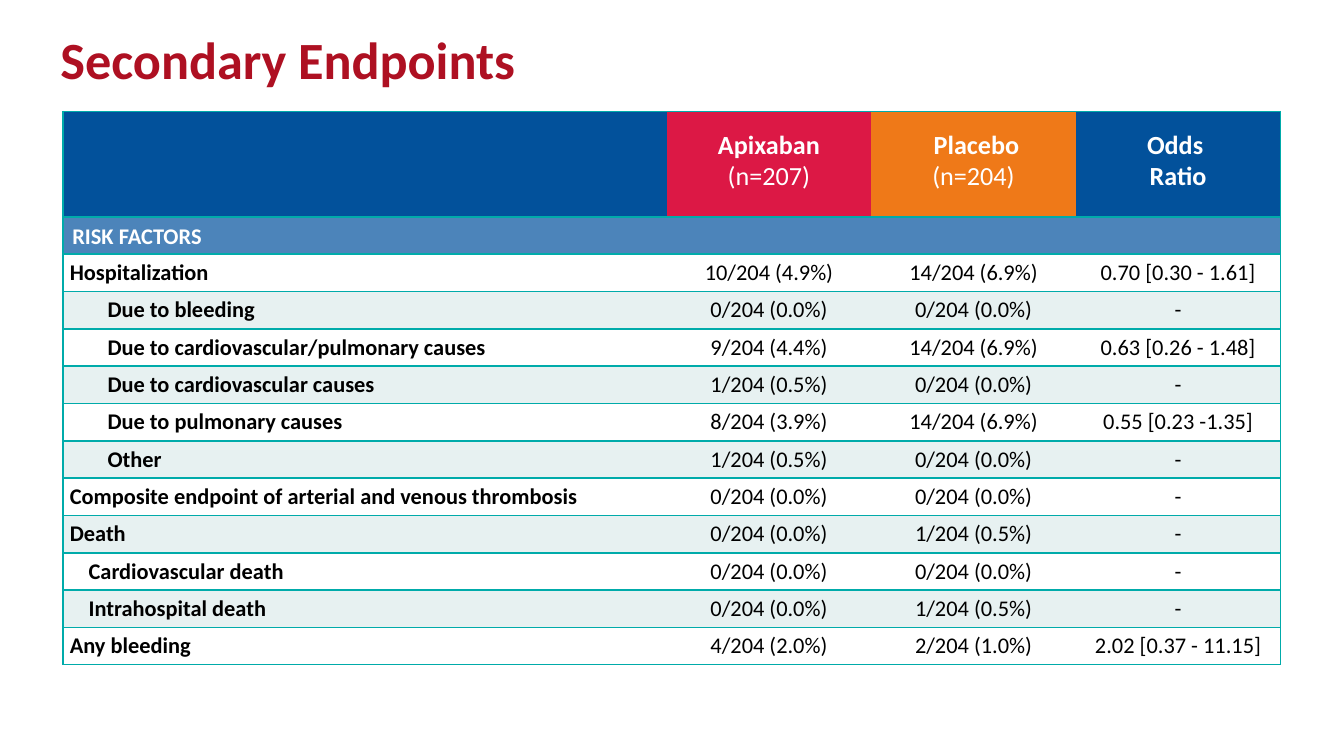
from lxml import etree
from pptx import Presentation
from pptx.dml.color import RGBColor
from pptx.enum.text import MSO_ANCHOR, PP_ALIGN
from pptx.oxml.ns import qn
from pptx.util import Pt

TOP, MIDDLE = MSO_ANCHOR.TOP, MSO_ANCHOR.MIDDLE
LEFT, CENTER = PP_ALIGN.LEFT, PP_ALIGN.CENTER
TITLE_ONLY = 5
FONT = "Calibri"
COLORS = {
    "title": "AE1022", "border": "00ABAA", "navy": "02519B", "red": "DC1845",
    "orange": "EF7918", "section": "4C84BA", "white": "FFFFFF",
    "tint": "E7F1F1", "text": "000000",
}

TABLE_LEFT = 33.8
COL_WIDTHS = [323.4, 109.6, 109.6, 109.6]
HEADER_H, ROW_H = 56.4, 20
# Cell margins: left, top, right, bottom
HEADER_INSETS = (5, 1.5, 5, 5)
SECTION_INSETS = (5, 3, 5, 2)
BODY_INSETS = (3.6, 0, 3.6, 0)
CAUSE, KIND = 20.2, 10.1  # indents of the sub-rows

# Header cells: fill, paragraphs of (text, bold)
HEADER = [
    ("navy", []),
    ("red", [("Apixaban", True), ("(n=207)", False)]),
    ("orange", [(" Placebo", True), ("(n=204)", False)]),
    ("navy", [("Odds \nRatio", True)]),
]

# Body rows: indent, label, apixaban, placebo, odds ratio
HOSPITALIZATION = [
    (0, "Hospitalization", "10/204 (4.9%)", "14/204 (6.9%)", "0.70 [0.30 - 1.61]"),
    (CAUSE, "Due to bleeding", "0/204 (0.0%)", "0/204 (0.0%)", "-"),
]
OUTCOMES = [
    (CAUSE, "Due to cardiovascular/pulmonary causes",
     "9/204 (4.4%)", "14/204 (6.9%)", "0.63 [0.26 - 1.48]"),
    (CAUSE, "Due to cardiovascular causes", "1/204 (0.5%)", "0/204 (0.0%)", "-"),
    (CAUSE, "Due to pulmonary causes", "8/204 (3.9%)", "14/204 (6.9%)", "0.55 [0.23 -1.35]"),
    (CAUSE, "Other", "1/204 (0.5%)", "0/204 (0.0%)", "-"),
    (0, "Composite endpoint of arterial and venous thrombosis",
     "0/204 (0.0%)", "0/204 (0.0%)", "-"),
    (0, "Death", "0/204 (0.0%)", "1/204 (0.5%)", "-"),
    (KIND, "Cardiovascular death", "0/204 (0.0%)", "0/204 (0.0%)", "-"),
    (KIND, "Intrahospital death", "0/204 (0.0%)", "1/204 (0.5%)", "-"),
    (0, "Any bleeding", "4/204 (2.0%)", "2/204 (1.0%)", "2.02 [0.37 - 11.15]"),
]


def rgb(name):
    return RGBColor.from_string(COLORS[name])


def add_run(p, text, size, color, bold):
    r = p.add_run()
    r.text = text
    r.font.name, r.font.size, r.font.bold = FONT, Pt(size), bold
    r.font.color.rgb = rgb(color)


def add_title(s, text):
    title = s.shapes.title
    title.left, title.top, title.width, title.height = Pt(25.2), Pt(10), Pt(620.6), Pt(32.4)
    tf = title.text_frame
    tf.vertical_anchor = TOP
    tf.margin_left, tf.margin_top, tf.margin_bottom = Pt(7.2), Pt(4.5), Pt(0)
    p = tf.paragraphs[0]
    p.alignment = LEFT
    p.line_spacing = 1
    add_run(p, text, 28, "title", True)


def set_borders(cell, first, last):
    """Rule above and below each cell, and at the outer sides of the table."""
    tcPr = cell._tc.get_or_add_tcPr()
    for side, shown in (("L", first), ("R", last), ("T", True), ("B", True)):
        ln = etree.SubElement(tcPr, qn("a:ln" + side), w=str(Pt(1)))
        if shown:
            fill = etree.SubElement(ln, qn("a:solidFill"))
            etree.SubElement(fill, qn("a:srgbClr"), val=COLORS["border"])
        else:
            etree.SubElement(ln, qn("a:noFill"))


def fill_cell(cell, paragraphs, fill, insets, size, color, align=CENTER, indent=0):
    cell.fill.solid()
    cell.fill.fore_color.rgb = rgb(fill)
    cell.vertical_anchor = MIDDLE
    (cell.margin_left, cell.margin_top,
     cell.margin_right, cell.margin_bottom) = map(Pt, insets)
    tf = cell.text_frame
    if not paragraphs:  # keeps an empty cell from stretching its row
        tf.paragraphs[0]._p.get_or_add_endParaRPr().set("sz", str(size * 100))
    for i, (text, bold) in enumerate(paragraphs):
        p = tf.add_paragraph() if i else tf.paragraphs[0]
        p.alignment, p.line_spacing = align, 0.95
        if indent:
            pPr = p._p.get_or_add_pPr()
            pPr.set("marL", str(Pt(indent)))
            pPr.set("indent", "0")
        for j, line in enumerate(text.split("\n")):
            if j:
                p.add_line_break()
            add_run(p, line, size, color, bold)


def add_table(s, top, heights):
    shape = s.shapes.add_table(len(heights), len(COL_WIDTHS), Pt(TABLE_LEFT), Pt(top),
                               Pt(sum(COL_WIDTHS)), Pt(sum(heights)))
    table = shape.table
    table.first_row = table.horz_banding = False
    for col, width in zip(table.columns, COL_WIDTHS):
        col.width = Pt(width)
    for row, height in zip(table.rows, heights):
        row.height = Pt(height)
        for c, cell in enumerate(row.cells):
            set_borders(cell, c == 0, c == len(COL_WIDTHS) - 1)
    return table


def fill_header(table):
    for c, (fill, paragraphs) in enumerate(HEADER):
        fill_cell(table.cell(0, c), paragraphs, fill, HEADER_INSETS, 14, "white")


def fill_section(table, row, text):
    for c in range(len(COL_WIDTHS)):
        paragraphs = [] if c else [(text, True)]
        fill_cell(table.cell(row, c), paragraphs, "section", SECTION_INSETS, 12, "white", LEFT)


def fill_body(table, first_row, rows):
    for i, (indent, label, *values) in enumerate(rows):
        fill = "tint" if i % 2 else "white"
        row = first_row + i
        fill_cell(table.cell(row, 0), [(label, True)], fill, BODY_INSETS, 12, "text",
                  LEFT, indent)
        for c, value in enumerate(values, 1):
            fill_cell(table.cell(row, c), [(value, False)], fill, BODY_INSETS, 12, "text")


def main():
    prs = Presentation()
    prs.slide_width, prs.slide_height = Pt(720), Pt(405)
    s = prs.slides.add_slide(prs.slide_layouts[TITLE_ONLY])
    add_title(s, "Secondary Endpoints")

    # Upper table: header, section row and first endpoints
    top = 59.8
    heights = [HEADER_H] + [ROW_H] * (1 + len(HOSPITALIZATION))
    upper = add_table(s, top, heights)
    fill_header(upper)
    fill_section(upper, 1, "RISK FACTORS")
    fill_body(upper, 2, HOSPITALIZATION)

    # Lower table: continues directly below
    lower = add_table(s, top + sum(heights), [ROW_H] * len(OUTCOMES))
    fill_body(lower, 0, OUTCOMES)

    prs.save("out.pptx")


if __name__ == "__main__":
    main()
